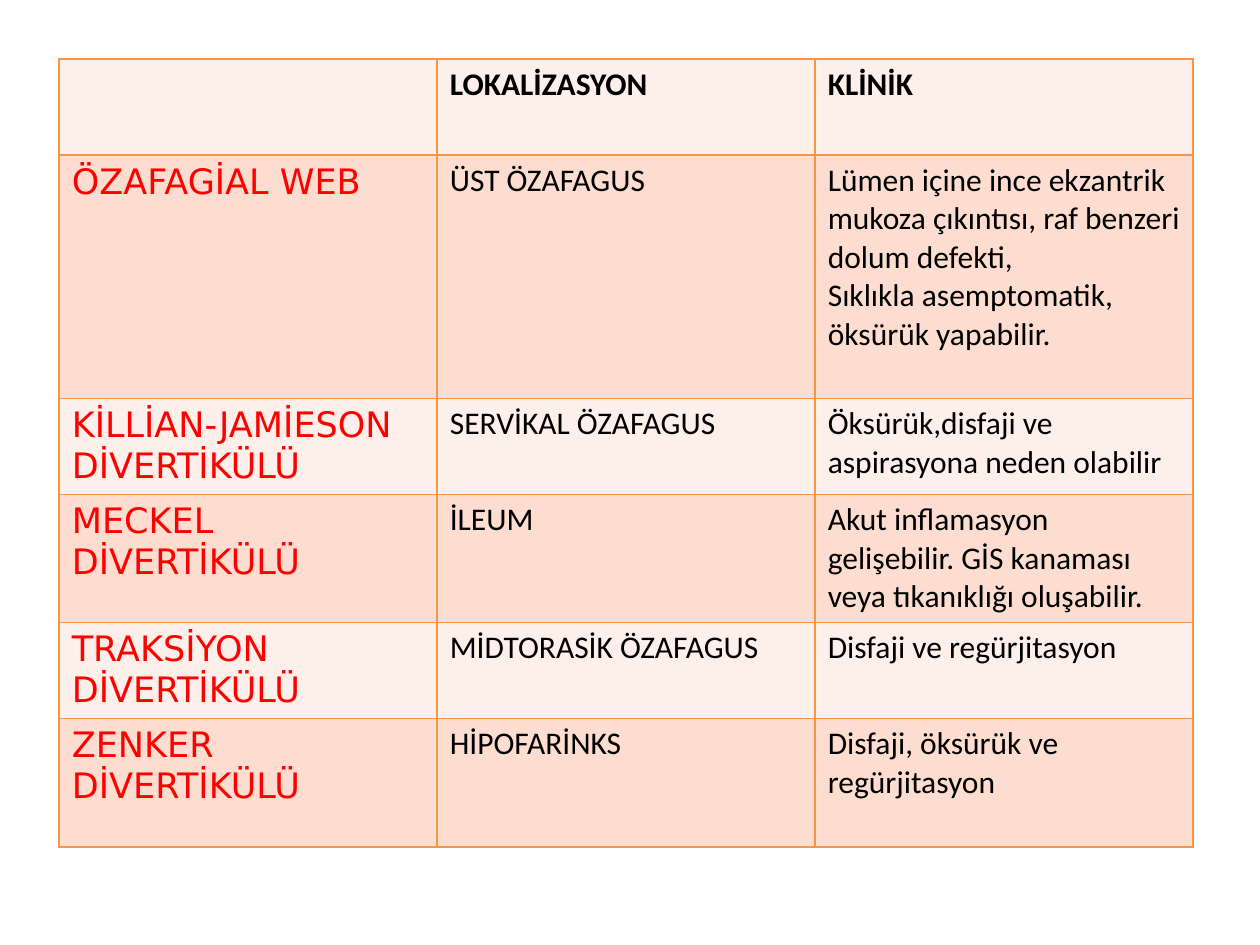
from lxml.etree import SubElement
from pptx import Presentation
from pptx.dml.color import RGBColor
from pptx.oxml.ns import qn
from pptx.util import Pt

COLORS = {
    "border": "F79646",
    "light": "FDEFE9",
    "dark": "FCDDCF",
    "disease": "FF0000",
    "body": "000000",
}

HEADER_FONT = {"name": "Calibri", "size": Pt(18), "bold": True}
DISEASE_FONT = {"name": "DejaVu Sans", "size": Pt(20), "bold": False}
BODY_FONT = {"name": "Calibri", "size": Pt(18), "bold": False}

LEFT, TOP, COLUMN_WIDTH = 33.84, 33.84, 216
BORDER_WIDTH = 1

# Row height, then disease, location and clinical findings
ROWS = [
    (54.86, "", "LOKALİZASYON", "KLİNİK"),
    (139.1, "ÖZAFAGİAL WEB", "ÜST ÖZAFAGUS",
     "Lümen içine ince ekzantrik mukoza çıkıntısı, raf benzeri dolum defekti,\n"
     "Sıklıkla asemptomatik, öksürük yapabilir."),
    (54.86, "KİLLİAN-JAMİESON DİVERTİKÜLÜ", "SERVİKAL ÖZAFAGUS",
     "Öksürük,disfaji ve aspirasyona neden olabilir"),
    (73.15, "MECKEL DİVERTİKÜLÜ", "İLEUM",
     "Akut inflamasyon gelişebilir. GİS kanaması veya tıkanıklığı oluşabilir."),
    (54.86, "TRAKSİYON DİVERTİKÜLÜ", "MİDTORASİK ÖZAFAGUS",
     "Disfaji ve regürjitasyon"),
    (73.3, "ZENKER DİVERTİKÜLÜ", "HİPOFARİNKS",
     "Disfaji, öksürük ve regürjitasyon"),
]


def add_borders(cell):
    properties = cell._tc.get_or_add_tcPr()
    for side in ("a:lnL", "a:lnR", "a:lnT", "a:lnB"):
        line = SubElement(properties, qn(side), w=str(Pt(BORDER_WIDTH)))
        fill = SubElement(line, qn("a:solidFill"))
        SubElement(fill, qn("a:srgbClr"), val=COLORS["border"])


def fill_cell(cell, text, font_format, text_color, background):
    # Borders precede the fill in the cell properties
    add_borders(cell)
    cell.fill.solid()
    cell.fill.fore_color.rgb = RGBColor.from_string(COLORS[background])
    cell.text = text
    for paragraph in cell.text_frame.paragraphs:
        for run in paragraph.runs:
            for attribute, value in font_format.items():
                setattr(run.font, attribute, value)
            run.font.color.rgb = RGBColor.from_string(COLORS[text_color])


def add_disease_table(slide):
    column_count = len(ROWS[0]) - 1
    table = slide.shapes.add_table(
        len(ROWS), column_count, Pt(LEFT), Pt(TOP),
        Pt(COLUMN_WIDTH * column_count), Pt(sum(row[0] for row in ROWS)),
    ).table
    for column in table.columns:
        column.width = Pt(COLUMN_WIDTH)

    for row_index, (height, *texts) in enumerate(ROWS):
        table.rows[row_index].height = Pt(height)
        background = "dark" if row_index % 2 else "light"
        for column_index, text in enumerate(texts):
            if row_index == 0:
                style = HEADER_FONT, "body"
            elif column_index == 0:
                style = DISEASE_FONT, "disease"
            else:
                style = BODY_FONT, "body"
            fill_cell(table.cell(row_index, column_index), text, *style, background)


def main():
    presentation = Presentation()
    presentation.slide_width, presentation.slide_height = Pt(720), Pt(540)
    slide = presentation.slides.add_slide(presentation.slide_layouts[6])

    # Oesophageal web and diverticula comparison
    add_disease_table(slide)
    presentation.save("out.pptx")


if __name__ == "__main__":
    main()
